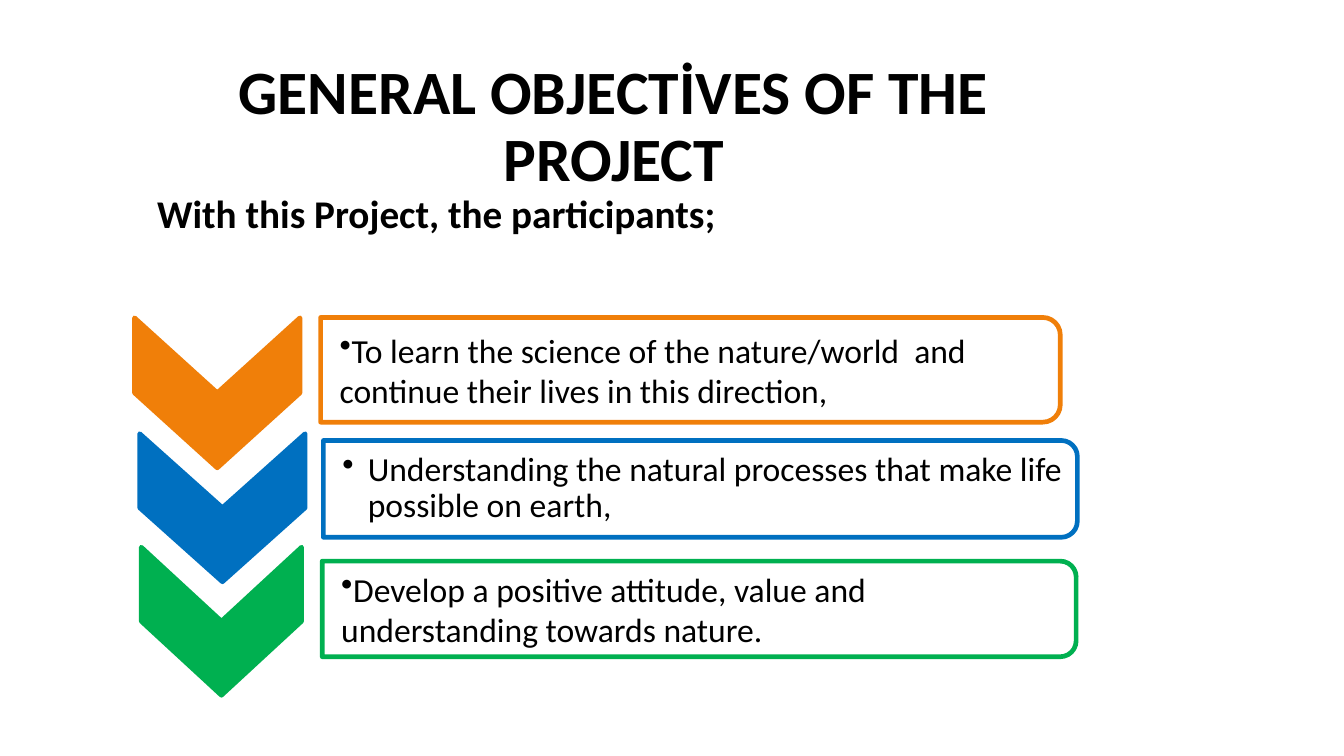
from lxml.etree import SubElement
from pptx import Presentation
from pptx.dml.color import RGBColor
from pptx.enum.shapes import MSO_SHAPE
from pptx.enum.text import MSO_ANCHOR, PP_ALIGN
from pptx.oxml.ns import qn
from pptx.util import Cm, Pt

FONT = "Calibri"
OBJECTIVES = [
    ("To learn the science of the nature/world  and continue their lives in this direction,",
     "F07F09", (3.39, 8.01, 4.17, 3.78), (8.08, 8, 18.64, 2.64), False),
    ("Understanding the natural processes that make life possible on earth,",
     "0070C0", (3.52, 10.93, 4.17, 3.73), (8.15, 11.1, 19, 2.44), True),
    ("Develop a positive attitude, value and understanding towards nature.",
     "00B050", (3.56, 13.79, 4.04, 3.73), (8.12, 14.14, 19, 2.41), False),
]


def color(value):
    return RGBColor.from_string(value)


def add_text_box(slide, box):
    tf = slide.shapes.add_textbox(*map(Cm, box)).text_frame
    tf.word_wrap = True
    return tf


def format_paragraph(p, size, bold=False):
    for r in p.runs:
        r.font.name = FONT
        r.font.size = Pt(size)
        r.font.bold = bold
        r.font.color.rgb = color("000000")


def add_turned_shape(slide, kind, box, fill, line):
    left, top, width, height = box
    shift = (width - height) / 2
    sp = slide.shapes.add_shape(
        kind, Cm(left + shift), Cm(top - shift), Cm(height), Cm(width))
    sp.rotation = 90
    sp.shadow.inherit = False
    sp.fill.solid()
    sp.fill.fore_color.rgb = color(fill)
    sp.line.color.rgb = color(line)
    sp.line.width = Pt(3.35)
    return sp


def set_alpha(sp, percent):
    rgb = sp.fill._xPr.find(qn("a:solidFill")).find(qn("a:srgbClr"))
    SubElement(rgb, qn("a:alpha"), val=str(percent * 1000))


def add_bullet(p, indent):
    pPr = p._p.get_or_add_pPr()
    pPr.set("marL", str(Cm(indent)))
    pPr.set("indent", str(-Cm(indent)))
    SubElement(pPr, qn("a:buChar"), char="•")


def add_heading(slide, box):
    tf = add_text_box(slide, box)
    tf.text = "GENERAL OBJECTİVES OF THE PROJECT\nWith this Project, the participants;"
    styles = [(44, PP_ALIGN.CENTER), (28, PP_ALIGN.JUSTIFY)]
    for p, (size, alignment) in zip(tf.paragraphs, styles):
        p.alignment = alignment
        p.line_spacing = 0.9
        format_paragraph(p, size, bold=True)


def add_objective(slide, text, accent, arrow_box, bar_box, hanging):
    add_turned_shape(slide, MSO_SHAPE.CHEVRON, arrow_box, accent, accent)
    bar = add_turned_shape(
        slide, MSO_SHAPE.ROUND_2_SAME_RECTANGLE, bar_box, "FFFFFF", accent)
    set_alpha(bar, 90)

    left, top, width, height = bar_box
    tf = add_text_box(slide, (left, top + 0.12, width - 0.12, height - 0.24))
    tf.vertical_anchor = MSO_ANCHOR.MIDDLE
    tf.margin_left = Cm(0.48)
    tf.margin_top = tf.margin_right = tf.margin_bottom = Cm(0.05)
    tf.text = text
    p = tf.paragraphs[0]
    add_bullet(p, 0.64 if hanging else 0)
    if hanging:
        p.line_spacing = 0.9
        p.space_after = Pt(3.6)
    format_paragraph(p, 24)


def main():
    prs = Presentation()
    prs.slide_width, prs.slide_height = Cm(33.87), Cm(19.05)
    slide = prs.slides.add_slide(prs.slide_layouts[6])
    for objective in OBJECTIVES:
        add_objective(slide, *objective)
    add_heading(slide, (3.71, 1.42, 23.52, 6.35))
    prs.save("out.pptx")


if __name__ == "__main__":
    main()
